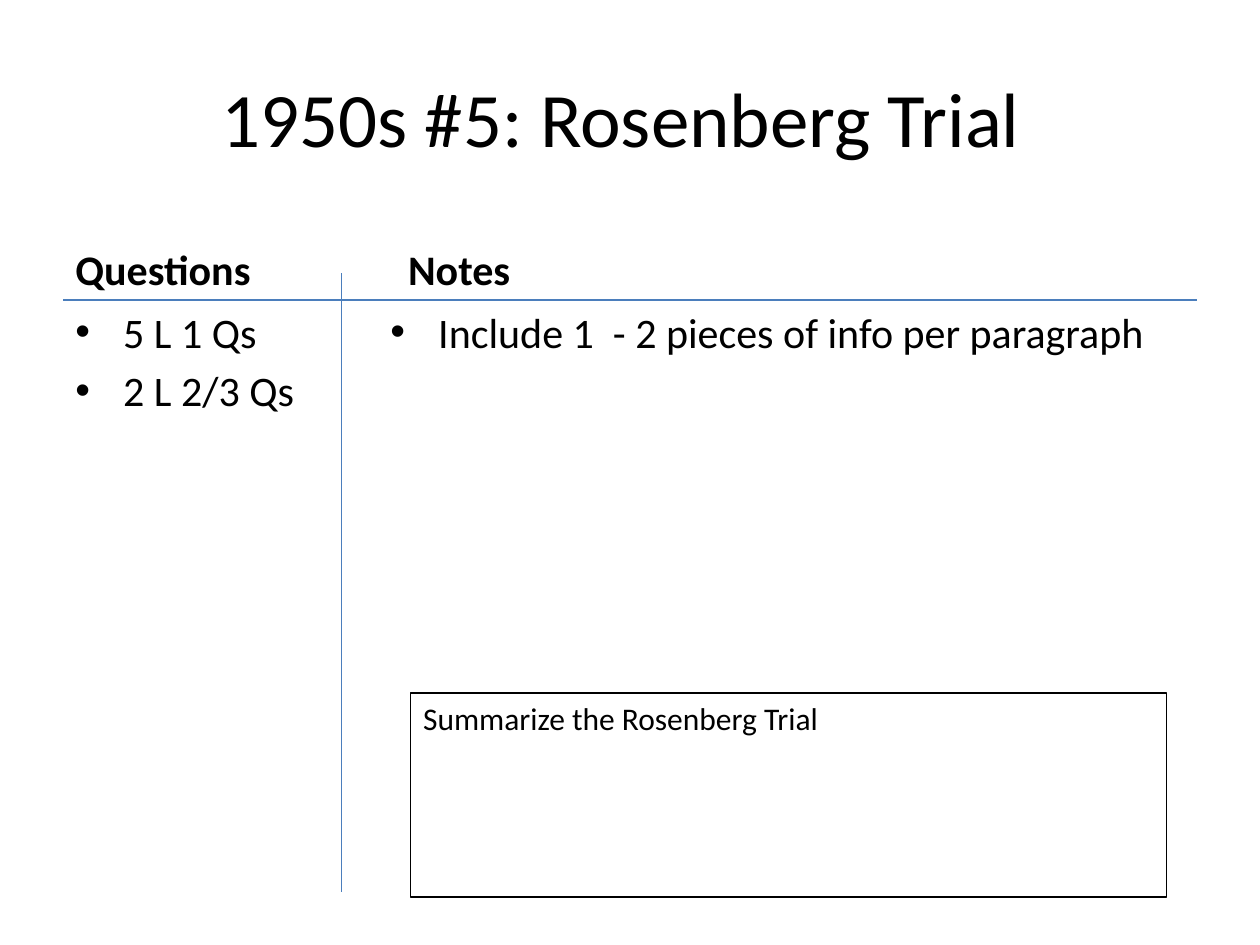
from dataclasses import dataclass

from lxml import etree
from pptx import Presentation
from pptx import util as u
from pptx.dml.color import RGBColor
from pptx.enum import shapes, text
from pptx.oxml import ns

BLACK = RGBColor(0x00, 0x00, 0x00)
WHITE = RGBColor(0xFF, 0xFF, 0xFF)
RULE_BLUE = RGBColor(0x4B, 0x7E, 0xBC)
FONT = "Calibri"
BODY_SIZE = 24
LINE_WIDTH = u.Pt(0.75)
BULLET_INDENT = u.Inches(0.38)
MARGIN = 0.5
HEADING_TOP = 1.68
HEADING_WIDTH = 4.42
HEADING_HEIGHT = 0.7
RULE_TOP = HEADING_TOP + HEADING_HEIGHT
LIST_HEIGHT = 4.32


@dataclass
class Column:
    heading: str
    heading_left: float
    list_left: float
    list_width: float
    items: list[str]


@dataclass
class Rule:
    start: tuple[float, float]
    end: tuple[float, float]


COLUMNS = [
    Column("Questions", MARGIN, MARGIN, 2.67, ["5 L 1 Qs", "2 L 2/3 Qs"]),
    Column("Notes", 3.14, 3, 6.5, ["Include 1  - 2 pieces of info per paragraph"]),
]
RULES = [
    Rule((2.71, 2.17), (2.71, 7.08)),
    Rule((MARGIN, RULE_TOP), (10 - MARGIN, RULE_TOP)),
]


def write_paragraph(para, words: str, size: float, bold: bool = False) -> None:
    span = para.add_run()
    span.text = words
    span.font.name = FONT
    span.font.size = u.Pt(size)
    span.font.bold = bold
    span.font.color.rgb = BLACK


def add_box(page, left: float, top: float, width: float, height: float,
            anchor=text.MSO_ANCHOR.TOP):
    box = page.shapes.add_textbox(*map(u.Inches, (left, top, width, height)))
    box.text_frame.word_wrap = True
    box.text_frame.vertical_anchor = anchor
    return box


def add_bullet(para) -> None:
    properties = para._p.get_or_add_pPr()
    properties.set("marL", str(BULLET_INDENT))
    properties.set("indent", str(-BULLET_INDENT))
    font = etree.SubElement(properties, ns.qn("a:buFont"))
    font.set("typeface", "Arial")
    bullet = etree.SubElement(properties, ns.qn("a:buChar"))
    bullet.set("char", "•")


def add_title(page, words: str) -> None:
    box = add_box(page, MARGIN, 0.3, 9, 1.25, text.MSO_ANCHOR.MIDDLE)
    para = box.text_frame.paragraphs[0]
    para.alignment = text.PP_ALIGN.CENTER
    write_paragraph(para, words, 44)


def add_column(page, column: Column) -> None:
    space_before = u.Pt(BODY_SIZE * 0.2)
    heading = add_box(page, column.heading_left, HEADING_TOP, HEADING_WIDTH,
                      HEADING_HEIGHT, text.MSO_ANCHOR.BOTTOM)
    para = heading.text_frame.paragraphs[0]
    para.space_before = space_before
    write_paragraph(para, column.heading, BODY_SIZE, bold=True)

    frame = add_box(page, column.list_left, RULE_TOP, column.list_width,
                    LIST_HEIGHT).text_frame
    for index, item in enumerate(column.items):
        para = frame.add_paragraph() if index else frame.paragraphs[0]
        para.space_before = space_before
        add_bullet(para)
        write_paragraph(para, item, BODY_SIZE)


def add_summary(page, words: str) -> None:
    box = add_box(page, 3.26, 5.5, 6, 1.62)
    box.line.color.rgb = BLACK
    box.line.width = LINE_WIDTH
    write_paragraph(box.text_frame.paragraphs[0], words, 18)


def add_rule(page, rule: Rule) -> None:
    line = page.shapes.add_connector(
        shapes.MSO_CONNECTOR.STRAIGHT, *map(u.Inches, rule.start + rule.end))
    line.line.color.rgb = RULE_BLUE
    line.line.width = LINE_WIDTH
    etree.SubElement(line._element.spPr, ns.qn("a:effectLst"))


def main() -> None:
    deck = Presentation()
    deck.slide_width = u.Inches(10)
    deck.slide_height = u.Inches(7.5)
    page = deck.slides.add_slide(deck.slide_layouts[6])
    page.background.fill.solid()
    page.background.fill.fore_color.rgb = WHITE
    add_title(page, "1950s #5: Rosenberg Trial ")
    for column in COLUMNS:
        add_column(page, column)
    add_summary(page, "Summarize the Rosenberg Trial")
    for rule in RULES:
        add_rule(page, rule)
    deck.save("out.pptx")


if __name__ == "__main__":
    main()
